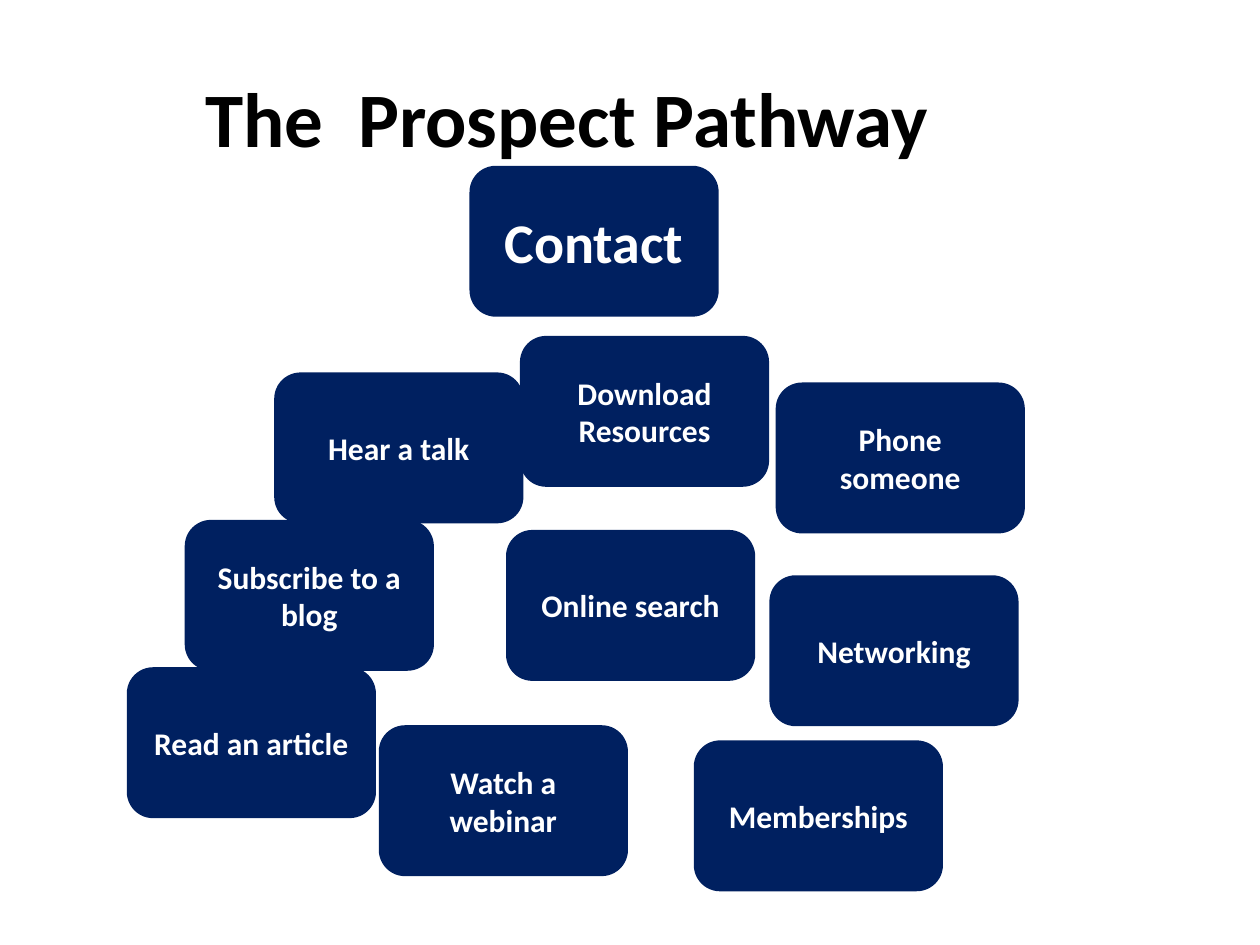
"""Build the prospect pathway slide."""
import pptx
import pptx.dml.color
import pptx.enum.shapes
import pptx.enum.text
import pptx.util

Inches = pptx.util.Inches
NAVY = pptx.dml.color.RGBColor(0x00, 0x20, 0x60)
WHITE = pptx.dml.color.RGBColor(0xFF, 0xFF, 0xFF)
BLACK = pptx.dml.color.RGBColor(0x00, 0x00, 0x00)

STEP_WIDTH, STEP_HEIGHT = 1.95, 1.17
STEP_SIZE, CONTACT_SIZE, TITLE_SIZE = 18, 32, 44

STEPS = [
    ("Read an article", 1.02, 5.31, STEP_SIZE),
    ("Subscribe to a blog", 1.48, 4.14, STEP_SIZE),
    ("Hear a talk", 2.19, 2.97, STEP_SIZE),
    ("Download Resources", 4.14, 2.68, STEP_SIZE),
    ("Online search", 4.03, 4.22, STEP_SIZE),
    ("Phone someone", 6.17, 3.05, STEP_SIZE),
    ("Contact", 3.74, 1.33, CONTACT_SIZE),
    ("Watch a webinar", 3.02, 5.77, STEP_SIZE),
    ("Networking", 6.12, 4.58, STEP_SIZE),
    ("Memberships", 5.52, 5.89, STEP_SIZE),
]


class PathwaySlide:
    """Hold the text style and the slide being filled."""

    def __init__(self, slide):
        self.slide = slide
        self.font_format = {"name": "Calibri", "bold": True}

    def set_wording(self, shape, wording, size, color):
        """Put centred, styled wording into a shape."""
        frame = shape.text_frame
        frame.text = wording
        frame.word_wrap = True
        frame.vertical_anchor = pptx.enum.text.MSO_ANCHOR.MIDDLE
        paragraph = frame.paragraphs[0]
        paragraph.alignment = pptx.enum.text.PP_ALIGN.CENTER
        font = paragraph.runs[0].font
        for attribute, value in {**self.font_format, "size": pptx.util.Pt(size)}.items():
            setattr(font, attribute, value)
        font.color.rgb = color

    def add_title(self, wording, left, top, width, height):
        """Place and fill the title placeholder."""
        heading = self.slide.shapes.title
        place = {"left": left, "top": top, "width": width, "height": height}
        for attribute, value in place.items():
            setattr(heading, attribute, Inches(value))
        self.set_wording(heading, wording, TITLE_SIZE, BLACK)

    def add_step(self, wording, left, top, size):
        """Add one rounded step of the pathway."""
        step = self.slide.shapes.add_shape(
            pptx.enum.shapes.MSO_SHAPE.ROUNDED_RECTANGLE,
            Inches(left), Inches(top), Inches(STEP_WIDTH), Inches(STEP_HEIGHT),
        )
        step.shadow.inherit = False
        step.fill.solid()
        step.fill.fore_color.rgb = NAVY
        step.line.color.rgb = NAVY
        step.line.width = pptx.util.Pt(2)
        self.set_wording(step, wording, size, WHITE)


def main():
    """Assemble and save the presentation."""
    deck = pptx.Presentation()
    deck.slide_width, deck.slide_height = Inches(10), Inches(7.5)
    pathway = PathwaySlide(deck.slides.add_slide(deck.slide_layouts[5]))
    pathway.add_title("The  Prospect Pathway", 0, 0.3, 9, 1.25)
    for step in STEPS:
        pathway.add_step(*step)
    deck.save("out.pptx")


if __name__ == "__main__":
    main()
